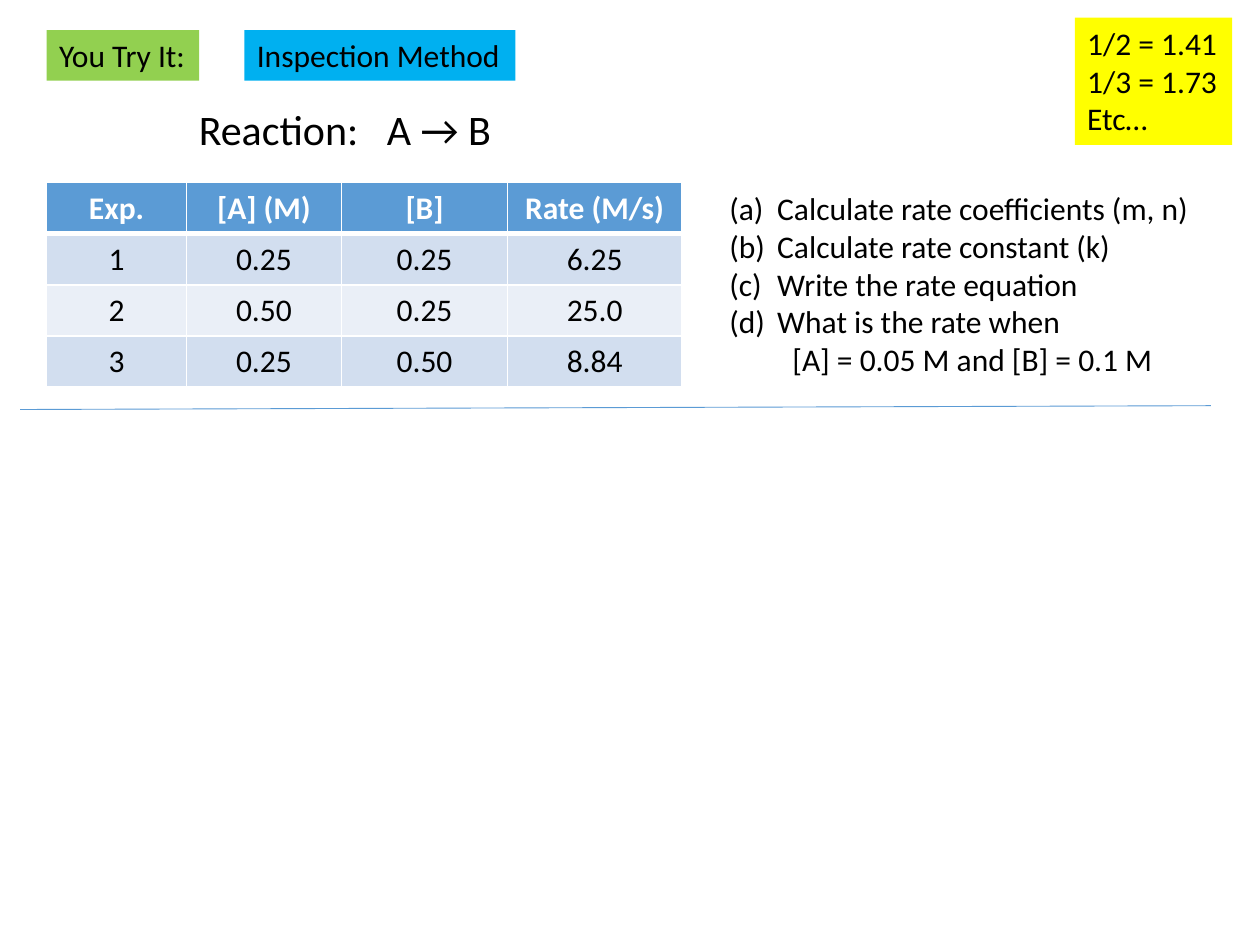
from dataclasses import dataclass

from lxml.etree import SubElement
from pptx import Presentation
from pptx.dml.color import RGBColor
from pptx.enum.shapes import MSO_CONNECTOR, MSO_SHAPE
from pptx.enum.text import MSO_AUTO_SIZE, MSO_ANCHOR, PP_ALIGN
from pptx.oxml.ns import qn
from pptx.util import Inches, Pt

FONT = "Calibri"
COLORS = {
    "text": "000000",
    "white": "FFFFFF",
    "accent": "5B9BD5",
    "odd_row": "D2DEEF",
    "even_row": "EAEFF7",
    "green": "92D050",
    "blue": "00B0F0",
    "yellow": "FFFF00",
}


@dataclass
class Label:
    text: str
    left: float
    top: float
    width: float
    height: float
    fill: str | None = None
    size: int = 18


LABELS = [
    Label("Reaction:   A → B", 1.48, 0.77, 2.54, 0.5, size=24),
    Label("You Try It:", 0.37, 0.24, 1.21, 0.4, "green"),
    Label("Inspection Method", 1.94, 0.24, 2.15, 0.4, "blue"),
    Label("1/2 = 1.41\n1/3 = 1.73\nEtc…", 8.53, 0.14, 1.25, 1.01, "yellow"),
]
TASKS = Label(
    "Calculate rate coefficients (m, n)\n"
    "Calculate rate constant (k)\n"
    "Write the rate equation\n"
    "What is the rate when\n"
    "[A] = 0.05 M and [B] = 0.1 M",
    5.69, 1.45, 3.89, 1.62,
)
EXPERIMENTS = [
    ("Exp.", "[A] (M)", "[B]", "Rate (M/s)"),
    ("1", "0.25", "0.25", "6.25"),
    ("2", "0.50", "0.25", "25.0"),
    ("3", "0.25", "0.50", "8.84"),
]
COLUMN_WIDTHS = (1.11, 1.23, 1.32, 1.38)
ROW_HEIGHT = 0.405


def rgb(name: str) -> RGBColor:
    return RGBColor.from_string(COLORS[name])


def style_text(frame, size: int = 18, color: str = "text", bold: bool = False) -> None:
    for paragraph in frame.paragraphs:
        for run in paragraph.runs:
            run.font.name = FONT
            run.font.size = Pt(size)
            run.font.bold = bold
            run.font.color.rgb = rgb(color)


def add_label(slide, label: Label):
    box = [Inches(n) for n in (label.left, label.top, label.width, label.height)]
    if label.fill:
        shape = slide.shapes.add_shape(MSO_SHAPE.RECTANGLE, *box)
        shape.shadow.inherit = False
        shape.fill.solid()
        shape.fill.fore_color.rgb = rgb(label.fill)
        shape.line.fill.background()
    else:
        shape = slide.shapes.add_textbox(*box)
    frame = shape.text_frame
    frame.text = label.text
    frame.word_wrap = False
    frame.auto_size = MSO_AUTO_SIZE.SHAPE_TO_FIT_TEXT
    frame.vertical_anchor = MSO_ANCHOR.TOP
    for paragraph in frame.paragraphs:
        paragraph.alignment = PP_ALIGN.LEFT
    style_text(frame, label.size)
    return shape


def add_tasks(slide) -> None:
    *tasks, condition = add_label(slide, TASKS).text_frame.paragraphs
    for task in tasks:
        properties = task._p.get_or_add_pPr()
        properties.set("marL", str(Inches(0.38)))
        properties.set("indent", str(-Inches(0.38)))
        SubElement(properties, qn("a:buAutoNum"), type="alphaLcParenBoth")
    condition._p.get_or_add_pPr().set("marL", str(Inches(0.5)))


def set_borders(cell, widths: dict[str, float]) -> None:
    properties = cell._tc.get_or_add_tcPr()
    for side, width in widths.items():
        line = SubElement(properties, qn(f"a:ln{side}"), w=str(Pt(width)))
        fill = SubElement(line, qn("a:solidFill"))
        SubElement(fill, qn("a:srgbClr"), val=COLORS["white"])


def add_experiments(slide) -> None:
    table = slide.shapes.add_table(
        len(EXPERIMENTS), len(COLUMN_WIDTHS), Inches(0.37), Inches(1.45),
        Inches(sum(COLUMN_WIDTHS)), Inches(ROW_HEIGHT * len(EXPERIMENTS)),
    ).table
    for column, width in zip(table.columns, COLUMN_WIDTHS):
        column.width = Inches(width)
    for r, values in enumerate(EXPERIMENTS):
        table.rows[r].height = Inches(ROW_HEIGHT)
        header = r == 0
        fill = "accent" if header else "odd_row" if r % 2 else "even_row"
        for c, value in enumerate(values):
            cell = table.cell(r, c)
            # The rule under the header is thicker than the others
            set_borders(cell, {"L": 1, "R": 1, "T": 3 if r == 1 else 1,
                               "B": 3 if header else 1})
            cell.fill.solid()
            cell.fill.fore_color.rgb = rgb(fill)
            cell.text_frame.text = value
            cell.text_frame.paragraphs[0].alignment = PP_ALIGN.CENTER
            style_text(cell.text_frame, color="white" if header else "text", bold=header)


def add_divider(slide) -> None:
    divider = slide.shapes.add_connector(
        MSO_CONNECTOR.STRAIGHT, Inches(0.16), Inches(3.25), Inches(9.61), Inches(3.22)
    )
    divider.line.color.rgb = rgb("accent")
    divider.line.width = Pt(0.5)
    SubElement(divider._element.spPr, qn("a:effectLst"))


def main() -> None:
    deck = Presentation()
    deck.slide_width, deck.slide_height = Inches(10), Inches(7.5)
    slide = deck.slides.add_slide(deck.slide_layouts[6])

    # Measured rates
    add_experiments(slide)
    # Reaction, headings and hint
    for label in LABELS:
        add_label(slide, label)
    # Rule above the working space
    add_divider(slide)
    # Questions
    add_tasks(slide)

    deck.save("out.pptx")


if __name__ == "__main__":
    main()
